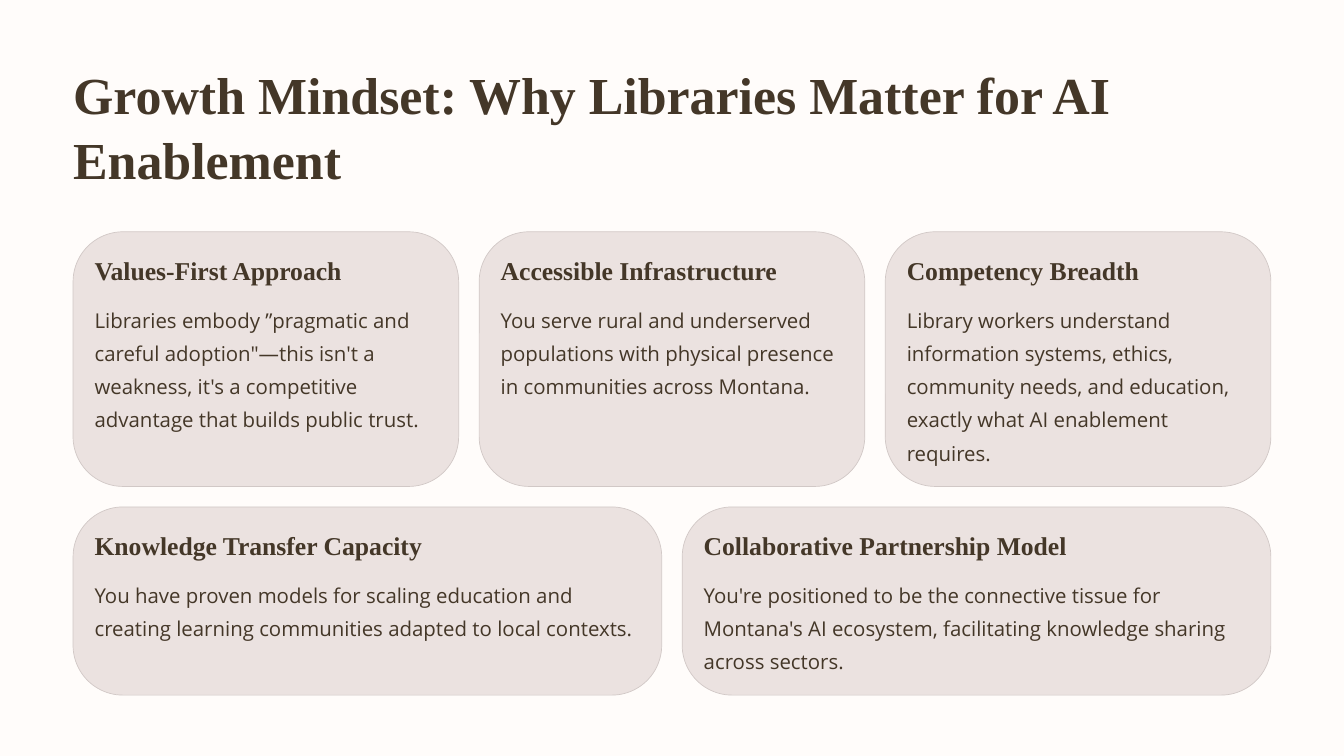
from dataclasses import dataclass

from pptx import Presentation
from pptx.dml.color import RGBColor
from pptx.enum.shapes import MSO_SHAPE as Preset
from pptx.enum.text import MSO_ANCHOR as Anchor, MSO_AUTO_SIZE as AutoSize, PP_ALIGN as Align
from pptx.shapes.autoshape import Shape
from pptx.slide import Slide
from pptx.util import Cm, Pt


@dataclass(frozen=True)
class TextStyle:
    font: str
    size: float
    line_height: float
    bold: bool = False


@dataclass(frozen=True)
class Theme:
    paper: RGBColor = RGBColor.from_string("FFFCFA")
    ink: RGBColor = RGBColor.from_string("443728")
    card: RGBColor = RGBColor.from_string("EBE2E0")
    border: RGBColor = RGBColor.from_string("D1C8C6")
    title: TextStyle = TextStyle("Times New Roman", 44.5, 55.5, True)
    heading: TextStyle = TextStyle("Times New Roman", 22, 27.5, True)
    body: TextStyle = TextStyle("Open Sans", 17.5, 28.5)


@dataclass(frozen=True)
class Card:
    heading: str
    heading_width: float
    body: str
    body_lines: int


@dataclass(frozen=True)
class Row:
    height: float
    cards: tuple[Card, ...]


THEME = Theme()

# Lengths in centimetres
MARGIN, CONTENT_WIDTH = 2.21, 36.22
TITLE_TOP, TITLE_HEIGHT = 1.83, 3.94
CARDS_TOP, GAP = 7.01, 0.62
PADDING, CORNER = 0.65, 1.51
HEADING_HEIGHT, BODY_OFFSET, BODY_LINE = 0.99, 2.03, 1.01

ROWS = (
    Row(7.7, (
        Card("Values-First Approach", 7.87,
             "Libraries embody ”pragmatic and careful adoption\"—this isn't a weakness, "
             "it's a competitive advantage that builds public trust.", 4),
        Card("Accessible Infrastructure", 7.87,
             "You serve rural and underserved populations with physical presence "
             "in communities across Montana.", 3),
        Card("Competency Breadth", 7.87,
             "Library workers understand information systems, ethics, community needs, "
             "and education, exactly what AI enablement requires.", 5),
    )),
    Row(5.69, (
        Card("Knowledge Transfer Capacity", 9.83,
             "You have proven models for scaling education and creating learning "
             "communities adapted to local contexts.", 3),
        Card("Collaborative Partnership Model", 10.87,
             "You're positioned to be the connective tissue for Montana's AI ecosystem, "
             "facilitating knowledge sharing across sectors.", 3),
    )),
)


def write(holder: Shape, text: str, *, style: TextStyle, wrap: bool = True) -> None:
    frame = holder.text_frame
    frame.margin_left = frame.margin_right = frame.margin_top = frame.margin_bottom = 0
    frame.auto_size = AutoSize.NONE
    frame.word_wrap = wrap
    frame.vertical_anchor = Anchor.TOP
    paragraph = frame.paragraphs[0]
    paragraph.alignment = Align.LEFT
    paragraph.line_spacing = Pt(style.line_height)
    paragraph.space_before = Pt(0)
    run = paragraph.add_run()
    run.text = text
    run.font.name = style.font
    run.font.size = Pt(style.size)
    run.font.bold = style.bold
    run.font.color.rgb = THEME.ink


def draw_title(slide: Slide, text: str) -> None:
    title = slide.shapes.title
    title.left, title.top = Cm(MARGIN), Cm(TITLE_TOP)
    title.width, title.height = Cm(CONTENT_WIDTH), Cm(TITLE_HEIGHT)
    write(title, text, style=THEME.title)


def draw_card(slide: Slide, card: Card, left: float, top: float,
              width: float, height: float) -> None:
    panel = slide.shapes.add_shape(Preset.ROUNDED_RECTANGLE,
                                   Cm(left), Cm(top), Cm(width), Cm(height))
    panel.adjustments[0] = CORNER / height
    panel.shadow.inherit = False
    panel.fill.solid()
    panel.fill.fore_color.rgb = THEME.card
    panel.line.color.rgb = THEME.border
    panel.line.width = Pt(0.6)

    text_left = Cm(left + PADDING)
    heading = slide.shapes.add_textbox(text_left, Cm(top + PADDING),
                                       Cm(card.heading_width), Cm(HEADING_HEIGHT))
    write(heading, card.heading, style=THEME.heading, wrap=False)
    body = slide.shapes.add_textbox(text_left, Cm(top + BODY_OFFSET),
                                    Cm(width - 2 * PADDING), Cm(card.body_lines * BODY_LINE))
    write(body, card.body, style=THEME.body)


def draw_rows(slide: Slide, rows: tuple[Row, ...]) -> None:
    """Stack the rows, each split into equal cards across the content width."""
    top = CARDS_TOP
    for row in rows:
        count = len(row.cards)
        width = (CONTENT_WIDTH - GAP * (count - 1)) / count
        for column, card in enumerate(row.cards):
            draw_card(slide, card, MARGIN + column * (width + GAP), top, width, row.height)
        top += row.height + GAP


def main() -> None:
    deck = Presentation()
    deck.slide_width, deck.slide_height = Cm(40.64), Cm(22.86)
    slide = deck.slides.add_slide(deck.slide_layouts.get_by_name("Title Only"))
    slide.background.fill.solid()
    slide.background.fill.fore_color.rgb = THEME.paper
    draw_title(slide, "Growth Mindset: Why Libraries Matter for AI Enablement")
    draw_rows(slide, ROWS)
    deck.save("out.pptx")


if __name__ == "__main__":
    main()
